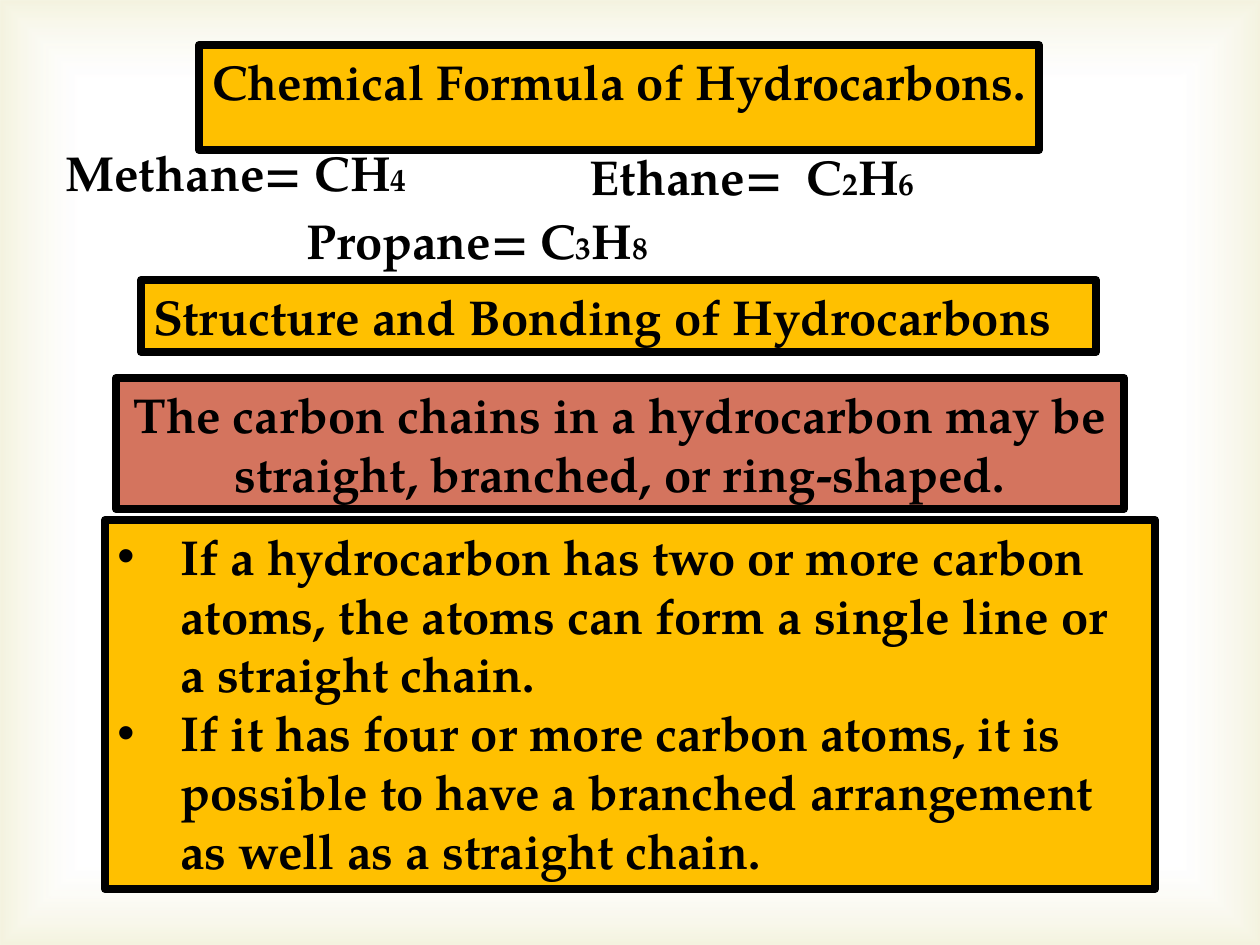
from lxml.etree import SubElement
from pptx import Presentation
from pptx.dml.color import RGBColor
from pptx.enum.shapes import MSO_SHAPE as Shape
from pptx.enum.text import MSO_ANCHOR as Anchor, MSO_AUTO_SIZE as AutoSize, PP_ALIGN as Align
from pptx.oxml import parse_xml
from pptx.oxml.ns import nsdecls, qn
from pptx.util import Pt

PX = 914400 / 126
SLIDE = (1260, 945)
FONT = "TeX Gyre Pagella"
BODY_SIZE, SUBSCRIPT_SIZE = 28, 18
BORDER = 4.5
BULLET_INDENT = 63
COLORS = {"text": "000000", "border": "000000", "gold": "FFC000",
          "coral": "D4745E", "center": "FFFFFF", "edge": "D1CA75"}

# Content: boxes are (left, top, width, height) in px
TITLE = ("Chemical Formula of Hydrocarbons.", (199, 45, 840, 72))

# Digits in a formula are set as small subscripts
FORMULAS = [
    ("Methane= ", "CH4", (53, 136, 388, 72)),
    ("Ethane=  ", "C2H6", (577, 140, 368, 72)),
    ("Propane= ", "C3H8", (294, 204, 378, 73)),
]

PANELS = [
    {"box": (141, 280, 955, 72), "fill": "gold", "align": Align.LEFT, "bullets": False,
     "lines": ["Structure and Bonding of Hydrocarbons"]},
    {"box": (116, 378, 1008, 131), "fill": "coral", "align": Align.CENTER, "bullets": False,
     "lines": ["The carbon chains in a hydrocarbon may be straight, branched, "
               "or ring-shaped."]},
    {"box": (105, 520, 1050, 369), "fill": "gold", "align": Align.LEFT, "bullets": True,
     "lines": ["If a hydrocarbon has two or more carbon atoms, the atoms can form "
               "a single line or a straight chain.",
               "If it has four or more carbon atoms, it is possible to have "
               "a branched arrangement as well as a straight chain."]},
]


def emu(px):
    return round(px * PX)


def place(box):
    return [emu(length) for length in box]


def color(name):
    return RGBColor.from_string(COLORS[name])


def add_run(paragraph, text, size=BODY_SIZE):
    run = paragraph.add_run()
    run.text = text
    run.font.name = FONT
    run.font.size = Pt(size)
    run.font.bold = True
    run.font.color.rgb = color("text")


def set_frame(shape):
    frame = shape.text_frame
    frame.word_wrap = True
    frame.auto_size = AutoSize.SHAPE_TO_FIT_TEXT
    frame.vertical_anchor = Anchor.TOP
    return frame


def add_bullet(paragraph):
    props = paragraph._p.get_or_add_pPr()
    props.set("marL", str(emu(BULLET_INDENT)))
    props.set("indent", str(-emu(BULLET_INDENT)))
    SubElement(props, qn("a:buFont"), typeface="Arial")
    SubElement(props, qn("a:buChar"), char="•")


def fill_panel(shape, fill, lines, align, bullets=False):
    shape.fill.solid()
    shape.fill.fore_color.rgb = color(fill)
    shape.line.color.rgb = color("border")
    shape.line.width = Pt(BORDER)
    frame = set_frame(shape)
    for index, line in enumerate(lines):
        paragraph = frame.add_paragraph() if index else frame.paragraphs[0]
        paragraph.alignment = align
        if bullets:
            add_bullet(paragraph)
        add_run(paragraph, line)


def add_vignette(slide):
    vignette = slide.shapes.add_shape(Shape.RECTANGLE, 0, 0, *place(SLIDE))
    vignette.shadow.inherit = False
    vignette.line.fill.background()
    gradient = parse_xml(
        f'<a:gradFill {nsdecls("a")} rotWithShape="1"><a:gsLst>'
        f'<a:gs pos="83000"><a:srgbClr val="{COLORS["center"]}"><a:alpha val="11000"/></a:srgbClr></a:gs>'
        f'<a:gs pos="100000"><a:srgbClr val="{COLORS["edge"]}"><a:alpha val="23000"/></a:srgbClr></a:gs>'
        '</a:gsLst><a:path path="rect">'
        '<a:fillToRect l="50000" t="50000" r="50000" b="50000"/></a:path></a:gradFill>')
    vignette._element.spPr.find(qn("a:prstGeom")).addnext(gradient)
    # Send behind the title
    slide.shapes._spTree.insert(2, vignette._element)


def main():
    prs = Presentation()
    prs.slide_width, prs.slide_height = place(SLIDE)
    slide = prs.slides.add_slide(prs.slide_layouts[5])
    add_vignette(slide)

    # Title
    heading, box = TITLE
    title = slide.shapes.title
    title.left, title.top, title.width, title.height = place(box)
    fill_panel(title, "gold", [heading], Align.CENTER)

    # Formulas
    for name, formula, box in FORMULAS:
        paragraph = set_frame(slide.shapes.add_textbox(*place(box))).paragraphs[0]
        add_run(paragraph, name + formula[0])
        for symbol in formula[1:]:
            add_run(paragraph, symbol, SUBSCRIPT_SIZE if symbol.isdigit() else BODY_SIZE)

    # Structure and bonding panels
    for panel in PANELS:
        shape = slide.shapes.add_shape(Shape.RECTANGLE, *place(panel["box"]))
        shape.shadow.inherit = False
        fill_panel(shape, panel["fill"], panel["lines"], panel["align"], panel["bullets"])

    prs.save("out.pptx")


if __name__ == "__main__":
    main()
